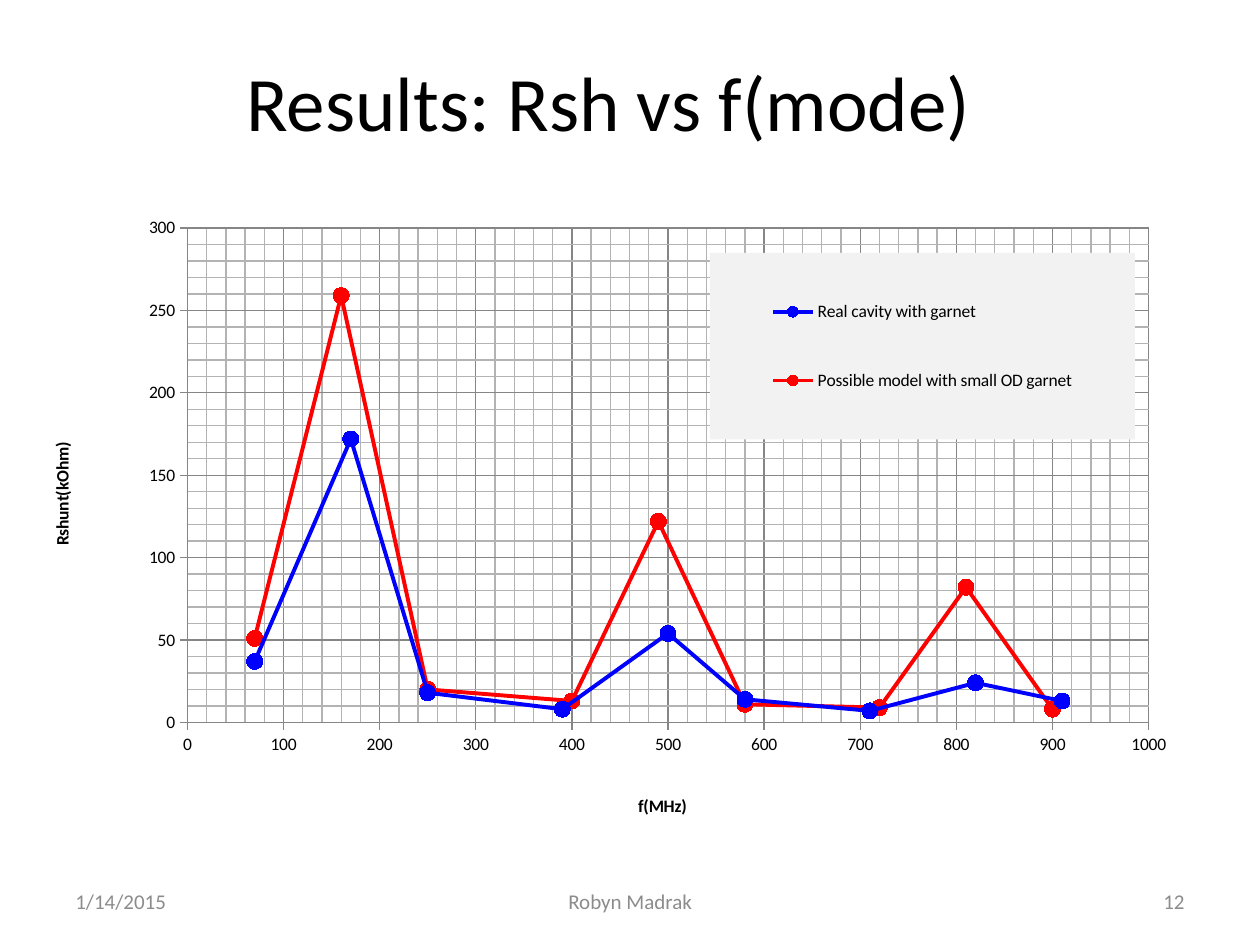
from dataclasses import dataclass

from lxml import etree
from pptx import Presentation
from pptx import util as u
from pptx.chart.data import XyChartData
from pptx.dml.color import RGBColor
from pptx.enum import chart as ch, text
from pptx.oxml import parse_xml
from pptx.oxml.ns import nsdecls, qn


@dataclass(frozen=True)
class Theme:
    font: str = "Calibri"
    ink: str = "000000"
    muted: str = "8C8C8C"
    major: str = "868686"
    minor: str = "B3B3B3"
    panel: str = "F2F2F2"
    real: str = "0000FF"
    model: str = "FF0000"
    title_size: float = 44
    footer_size: float = 12
    chart_size: float = 10


def rgb(value):
    return RGBColor.from_string(value)


def set_font(font, theme, size, color, bold=False):
    font.name, font.size, font.bold = theme.font, u.Pt(size), bold
    font.color.rgb = rgb(color)


def write(tf, content, *, theme, size, color, align=text.PP_ALIGN.CENTER, bold=False):
    p = tf.paragraphs[0]
    p.alignment = align
    r = p.add_run()
    r.text = content
    set_font(r.font, theme, size, color, bold)


def set_line(line, color, width):
    line.color.rgb = rgb(color)
    line.width = u.Pt(width)


def fill_xml(color):
    return f'<a:solidFill><a:srgbClr val="{color}"/></a:solidFill>'


def shape_props(content):
    return parse_xml(f"<c:spPr {nsdecls('c', 'a')}>{content}</c:spPr>")


def set_layout(element, x, y, w=None, h=None, inner=False):
    for old in element.findall(qn("c:layout")):
        element.remove(old)
    layout = parse_xml(f"<c:layout {nsdecls('c')}><c:manualLayout/></c:layout>")
    parts = {"layoutTarget": "inner" if inner else None, "xMode": "edge", "yMode": "edge",
             "x": x, "y": y, "w": w, "h": h}
    for tag, value in parts.items():
        if value is not None:
            etree.SubElement(layout[0], qn(f"c:{tag}")).set("val", str(value))
    overlay = element.find(qn("c:overlay"))
    if overlay is None:
        element.insert(0, layout)
    else:
        overlay.addprevious(layout)


class Deck:
    def __init__(self, theme):
        self.theme = theme
        self.prs = Presentation()
        self.prs.slide_width, self.prs.slide_height = u.Cm(25.4), u.Cm(19.05)
        self.slide = self.prs.slides.add_slide(self.prs.slide_layouts[5])

    def title(self, content, *box):
        sp = self.slide.shapes.title
        sp.left, sp.top, sp.width, sp.height = map(u.Cm, box)
        tf = sp.text_frame
        tf.vertical_anchor = text.MSO_ANCHOR.MIDDLE
        write(tf, content, theme=self.theme, size=self.theme.title_size, color=self.theme.ink)

    def footer(self, content, left, width, align):
        sp = self.slide.shapes.add_textbox(u.Cm(left), u.Cm(17.66), u.Cm(width), u.Cm(1.01))
        tf = sp.text_frame
        tf.word_wrap = True
        tf.vertical_anchor = text.MSO_ANCHOR.MIDDLE
        write(tf, content, theme=self.theme, size=self.theme.footer_size,
              color=self.theme.muted, align=align)

    def scatter(self, series, *box):
        data = XyChartData()
        for name, _, points in series:
            s = data.add_series(name)
            for x, y in points:
                s.add_data_point(x, y)
        chart = self.slide.shapes.add_chart(
            ch.XL_CHART_TYPE.XY_SCATTER_LINES, *map(u.Cm, box), data).chart
        chart.has_title = False
        set_font(chart.font, self.theme, self.theme.chart_size, self.theme.ink)
        chart.plots[0].vary_by_categories = False
        for s, (_, color, _) in zip(chart.plots[0].series, series):
            s.smooth = False
            set_line(s.format.line, color, 2.25)
            s.marker.style, s.marker.size = ch.XL_MARKER_STYLE.CIRCLE, 9
            s.marker.format.fill.solid()
            s.marker.format.fill.fore_color.rgb = rgb(color)
            set_line(s.marker.format.line, color, 0.75)
        plot_area = chart.plots[0]._element.getparent()
        set_layout(plot_area, 0.142, 0.084, 0.769, 0.716, inner=True)
        return chart

    def axis(self, axis, title, maximum, major, minor, position):
        axis.minimum_scale, axis.maximum_scale = 0, maximum
        axis.major_unit, axis.minor_unit = major, minor
        axis.major_tick_mark = ch.XL_TICK_MARK.OUTSIDE
        axis.minor_tick_mark = ch.XL_TICK_MARK.NONE
        axis.has_major_gridlines = axis.has_minor_gridlines = True
        set_line(axis.major_gridlines.format.line, self.theme.major, 0.75)
        axis._element.find(qn("c:minorGridlines")).append(
            shape_props(f'<a:ln w="{u.Pt(0.75)}">{fill_xml(self.theme.minor)}</a:ln>'))
        set_line(axis.format.line, self.theme.major, 0.75)
        axis.tick_labels.number_format = "General"
        axis.tick_labels.number_format_is_linked = False
        write(axis.axis_title.text_frame, title, theme=self.theme,
              size=self.theme.chart_size, color=self.theme.ink, bold=True)
        set_layout(axis.axis_title._element, *position)

    def legend(self, chart, *box):
        chart.has_legend = True
        legend = chart.legend
        legend.position = ch.XL_LEGEND_POSITION.RIGHT
        legend.include_in_layout = False
        set_font(legend.font, self.theme, self.theme.chart_size, self.theme.ink)
        set_layout(legend._element, *box)
        legend._element.find(qn("c:overlay")).addnext(shape_props(fill_xml(self.theme.panel)))


def main():
    theme = Theme()
    deck = Deck(theme)
    deck.title("Results: Rsh vs f(mode)", 0.84, 0.43, 22.86, 3.18)

    real = zip([70, 170, 250, 390, 500, 580, 710, 820, 910],
               [37, 172, 18, 8, 54, 14, 7, 24, 13])
    model = zip([70, 160, 250, 400, 490, 580, 720, 810, 900],
                [51, 259, 20, 13, 122, 11, 9, 82, 8])
    chart = deck.scatter([
        ("Real cavity with garnet", theme.real, real),
        ("Possible model with small OD garnet", theme.model, model),
    ], 0.2, 3.43, 25.2, 13.92)
    deck.axis(chart.category_axis, "f(MHz)", 1000, 100, 20, (0.5, 0.9))
    deck.axis(chart.value_axis, "Rshunt(kOhm)", 300, 50, 10, (0.03, 0.39))
    deck.legend(chart, 0.56, 0.12, 0.34, 0.27)

    deck.footer("1/14/2015", 1.27, 5.92, text.PP_ALIGN.LEFT)
    deck.footer("Robyn Madrak", 8.68, 8.05, text.PP_ALIGN.CENTER)
    deck.footer("12", 18.21, 5.92, text.PP_ALIGN.RIGHT)
    deck.prs.save("out.pptx")


if __name__ == "__main__":
    main()
